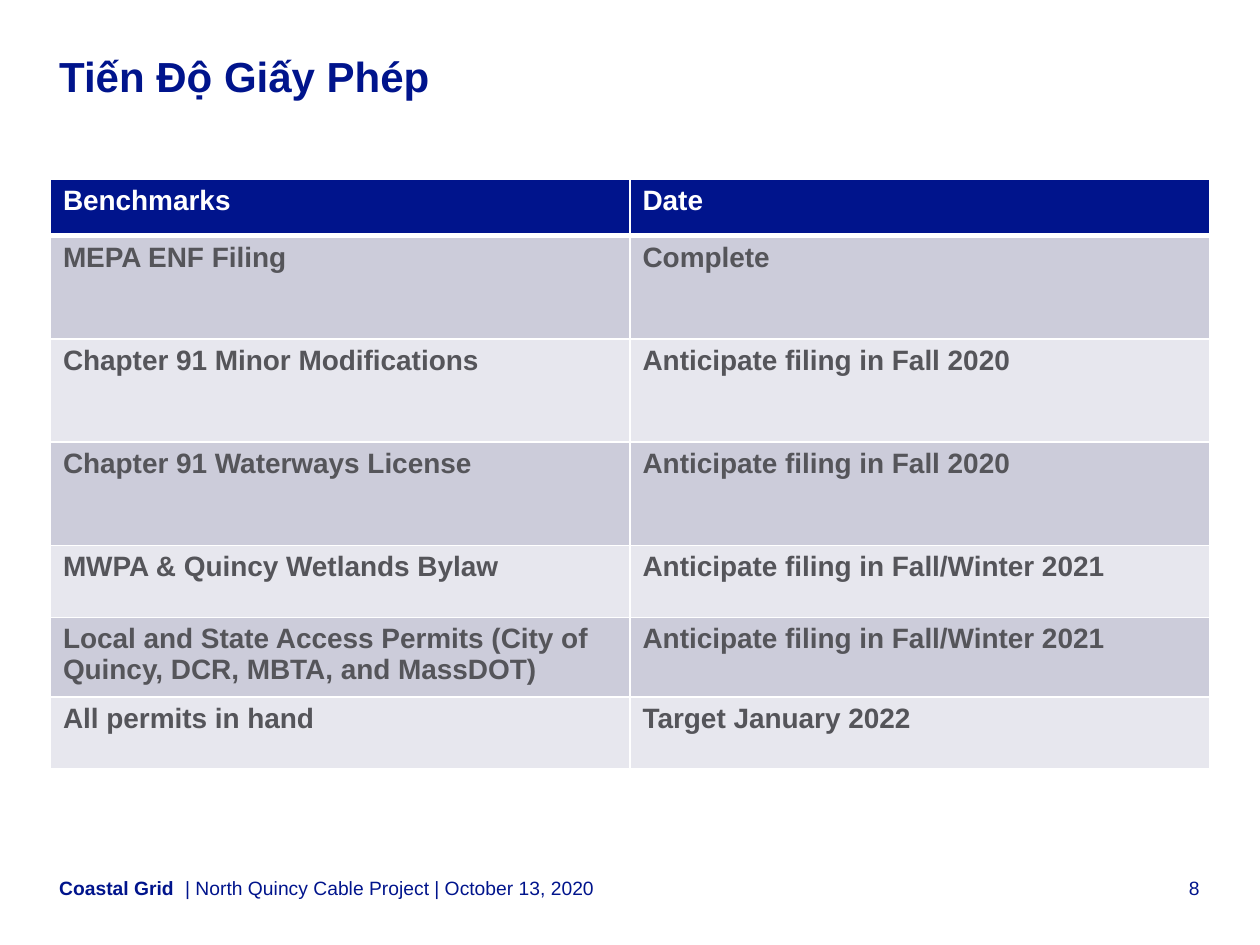
import pptx
import pptx.dml.color
import pptx.enum.text
import pptx.oxml
import pptx.oxml.ns
import pptx.util
from pptx.util import Inches

ALIGN = pptx.enum.text.PP_ALIGN
ANCHOR = pptx.enum.text.MSO_ANCHOR

NAVY = "00148C"
GRAY = "55555A"
WHITE = "FFFFFF"
BANDS = ("CCCCDA", "E7E7EE")

BENCHMARKS = [
    ("Benchmarks", "Date"),
    ("MEPA ENF Filing", "Complete"),
    ("Chapter 91 Minor Modifications", "Anticipate filing in Fall 2020"),
    ("Chapter 91 Waterways License", "Anticipate filing in Fall 2020"),
    ("MWPA & Quincy Wetlands Bylaw", "Anticipate filing in Fall/Winter 2021"),
    ("Local and State Access Permits (City of Quincy, DCR, MBTA, and MassDOT)",
     "Anticipate filing in Fall/Winter 2021"),
    ("All permits in hand", "Target January 2022"),
]
ROW_HEIGHTS = [0.45] + [0.82] * 3 + [0.57] * 3


def color(hex_string):
    return pptx.dml.color.RGBColor.from_string(hex_string)


def write_text(text_frame, text, size=11, hex_color=NAVY, bold=False,
               align=ALIGN.LEFT, space_after=0):
    paragraph = text_frame.paragraphs[0]
    paragraph.alignment = align
    paragraph.space_after = pptx.util.Pt(space_after)
    run = paragraph.add_run()
    run.text = text
    run.font.name = "Arial"
    run.font.size = pptx.util.Pt(size)
    run.font.bold = bold
    run.font.color.rgb = color(hex_color)


def set_borders(cell, widths, hex_color=WHITE):
    """Draw cell borders; widths maps the sides L, R, T, B to points."""
    properties = cell._tc.get_or_add_tcPr()
    for index, side in enumerate("LRTB"):
        line = pptx.oxml.parse_xml(
            f'<a:ln{side} {pptx.oxml.ns.nsdecls("a")} w="{pptx.util.Pt(widths[side])}">'
            f'<a:solidFill><a:srgbClr val="{hex_color}"/></a:solidFill></a:ln{side}>')
        properties.insert(index, line)


class SlideBuilder:
    def __init__(self, presentation):
        self.slide = presentation.slides.add_slide(presentation.slide_layouts[6])

    def text(self, text, left, top, width, height, anchor=ANCHOR.TOP, **text_format):
        box = self.slide.shapes.add_textbox(
            Inches(left), Inches(top), Inches(width), Inches(height))
        frame = box.text_frame
        frame.word_wrap = True
        frame.vertical_anchor = anchor
        frame.margin_left = frame.margin_right = 0
        frame.margin_top = frame.margin_bottom = 0
        write_text(frame, text, **text_format)

    def footer(self, text, left, width, **text_format):
        self.text(text, left, 6.95, width, 0.19, anchor=ANCHOR.BOTTOM, **text_format)

    def table(self, rows, row_heights, left, top, width):
        table = self.slide.shapes.add_table(
            len(rows), len(rows[0]), Inches(left), Inches(top),
            Inches(width), Inches(sum(row_heights))).table
        for row_index, (values, height) in enumerate(zip(rows, row_heights)):
            table.rows[row_index].height = Inches(height)
            is_header = row_index == 0
            fill = NAVY if is_header else BANDS[(row_index - 1) % 2]
            borders = {"L": 1, "R": 1, "T": 3 if row_index == 1 else 1,
                       "B": 3 if is_header else 1}
            for column_index, value in enumerate(values):
                cell = table.cell(row_index, column_index)
                cell.fill.solid()
                cell.fill.fore_color.rgb = color(fill)
                set_borders(cell, borders)
                write_text(cell.text_frame, value, size=16, bold=True, space_after=6,
                           hex_color=WHITE if is_header else GRAY)


def main():
    presentation = pptx.Presentation()
    presentation.slide_width = Inches(10)
    presentation.slide_height = Inches(7.5)

    builder = SlideBuilder(presentation)
    builder.footer("8", 8.94, 0.58, align=ALIGN.RIGHT)
    builder.footer("Coastal Grid", 0.47, 1, bold=True)
    builder.footer("| North Quincy Cable Project | October 13, 2020", 1.47, 7.16)
    builder.text("Tiến Độ Giấy Phép", 0.47, 0.4, 9.06, 0.4, size=24, bold=True)
    builder.table(BENCHMARKS, ROW_HEIGHTS, 0.4, 1.42, 9.2)

    presentation.save("out.pptx")


if __name__ == "__main__":
    main()
